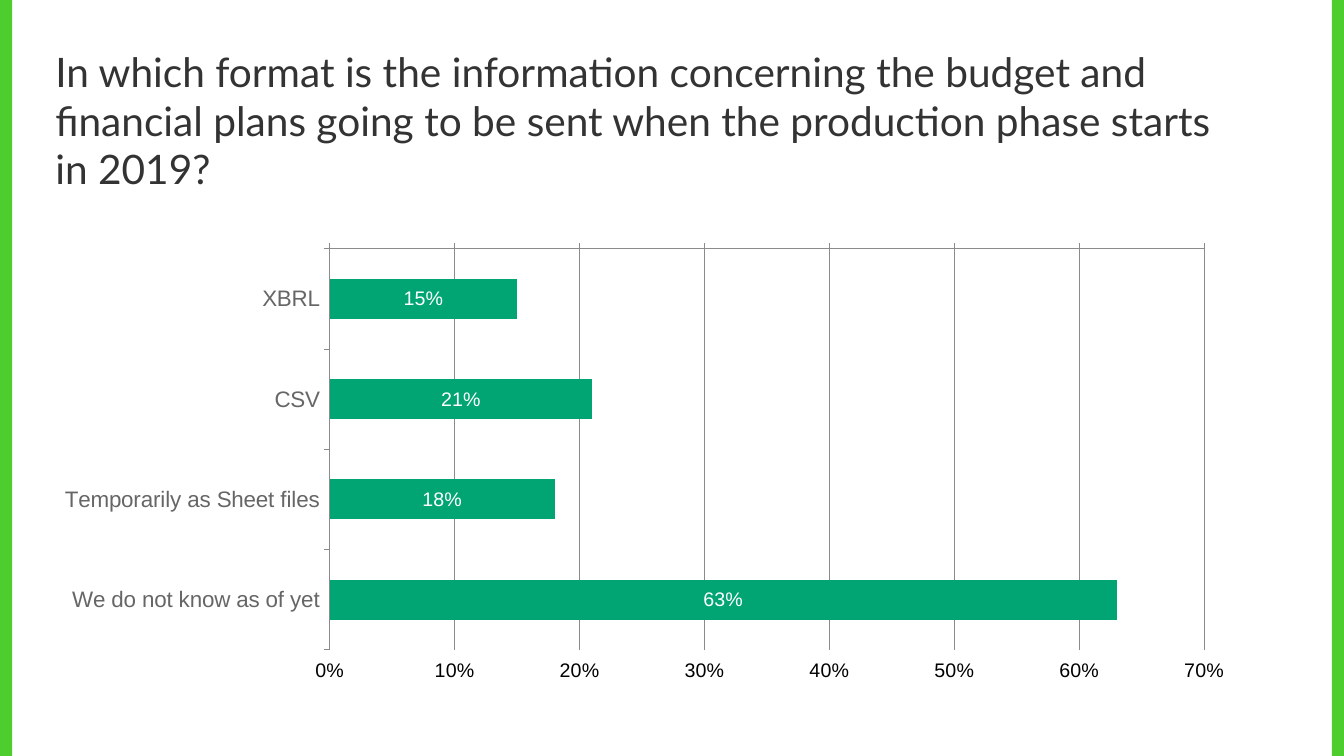
from dataclasses import dataclass

from lxml import etree
from pptx import Presentation
from pptx.chart.data import CategoryChartData
from pptx.dml.color import RGBColor
from pptx.enum.chart import (XL_CHART_TYPE, XL_LABEL_POSITION, XL_TICK_LABEL_POSITION,
                             XL_TICK_MARK)
from pptx.enum.shapes import MSO_SHAPE
from pptx.enum.text import MSO_ANCHOR
from pptx.oxml.ns import qn
from pptx.util import Inches, Pt

BAR = XL_CHART_TYPE.BAR_CLUSTERED
RECT = MSO_SHAPE.RECTANGLE
MIDDLE = MSO_ANCHOR.MIDDLE
CENTER = XL_LABEL_POSITION.CENTER
LOW, HIGH = XL_TICK_LABEL_POSITION.LOW, XL_TICK_LABEL_POSITION.HIGH
TICK_OUT, TICK_NONE = XL_TICK_MARK.OUTSIDE, XL_TICK_MARK.NONE


@dataclass(frozen=True)
class Theme:
    edge: RGBColor = RGBColor(0x4D, 0xCE, 0x2E)
    title: RGBColor = RGBColor(0x33, 0x33, 0x33)
    bar: RGBColor = RGBColor(0x00, 0xA5, 0x73)
    category: RGBColor = RGBColor(0x66, 0x66, 0x66)
    value: RGBColor = RGBColor(0x00, 0x00, 0x00)
    label: RGBColor = RGBColor(0xFF, 0xFF, 0xFF)
    line: RGBColor = RGBColor(0x8B, 0x8B, 0x8B)
    title_font: str = "Lato"
    chart_font: str = "Arial"
    title_size: Pt = Pt(29)
    category_size: Pt = Pt(16)
    value_size: Pt = Pt(14)


THEME = Theme()
SLIDE_W, SLIDE_H, EDGE_W = 13.33, 7.5, 0.12

QUESTION = ("In which format is the information concerning the budget and financial plans "
            "going to be sent when the production phase starts in 2019?")
ANSWERS = {
    "XBRL": 0.15,
    "CSV": 0.21,
    "Temporarily as Sheet files": 0.18,
    "We do not know as of yet": 0.63,
}


def set_font(font, name, size, color):
    font.name, font.size, font.color.rgb = name, size, color


def add_edges(s, x, y, w, h):
    """Green strips down both sides of the box."""
    for left in (x, x + w - EDGE_W):
        sp = s.shapes.add_shape(RECT, Inches(left), Inches(y), Inches(EDGE_W), Inches(h))
        sp.shadow.inherit = False
        sp.fill.solid()
        sp.fill.fore_color.rgb = THEME.edge
        sp.line.fill.background()


def add_title(s, x, y, w, h, text):
    tf = s.shapes.add_textbox(Inches(x), Inches(y), Inches(w), Inches(h)).text_frame
    tf.word_wrap = True
    tf.vertical_anchor = MIDDLE
    p = tf.paragraphs[0]
    p.text = text
    set_font(p.font, THEME.title_font, THEME.title_size, THEME.title)


def fix_plot_area(chart, **fractions):
    """Fix the inner plot area as fractions of the chart."""
    area = chart.element.find(".//" + qn("c:plotArea"))
    for old in area.findall(qn("c:layout")):
        area.remove(old)
    layout = etree.Element(qn("c:layout"))
    area.insert(0, layout)
    manual = etree.SubElement(layout, qn("c:manualLayout"))
    settings = {"layoutTarget": "inner", "xMode": "edge", "yMode": "edge", **fractions}
    for tag, value in settings.items():
        etree.SubElement(manual, qn("c:" + tag)).set("val", str(value))


def add_answer_chart(s, x, y, w, h, answers):
    data = CategoryChartData(number_format="0%")
    data.categories = list(answers)
    data.add_series("Series 1", list(answers.values()))
    chart = s.shapes.add_chart(BAR, Inches(x), Inches(y), Inches(w), Inches(h), data).chart
    chart.has_legend = False
    chart.has_title = False
    set_font(chart.font, THEME.chart_font, THEME.value_size, THEME.value)
    fix_plot_area(chart, x=0.24, y=0.02, w=0.73, h=0.89)

    # Axes: first answer on top, percentages along the bottom
    cat, val = chart.category_axis, chart.value_axis
    cat.reverse_order = True
    cat.tick_label_position = LOW
    val.tick_label_position = HIGH
    val.minimum_scale, val.maximum_scale, val.major_unit = 0, 0.7, 0.1
    val.tick_labels.number_format = "0%"
    val.tick_labels.number_format_is_linked = False
    set_font(cat.tick_labels.font, THEME.chart_font, THEME.category_size, THEME.category)
    val.has_major_gridlines = True
    for axis in (cat, val):
        axis.major_tick_mark, axis.minor_tick_mark = TICK_OUT, TICK_NONE
    for part in (cat, val, val.major_gridlines):
        part.format.line.color.rgb = THEME.line
        part.format.line.width = Pt(0.75)

    # Bars and their labels
    plot = chart.plots[0]
    plot.gap_width = 150
    plot.vary_by_categories = False
    fill = plot.series[0].format.fill
    fill.solid()
    fill.fore_color.rgb = THEME.bar
    plot.has_data_labels = True
    labels = plot.data_labels
    labels.show_value = True
    labels.number_format, labels.number_format_is_linked = "0%", False
    labels.position = CENTER
    set_font(labels.font, THEME.chart_font, THEME.value_size, THEME.label)


def main():
    prs = Presentation()
    prs.slide_width, prs.slide_height = Inches(SLIDE_W), Inches(SLIDE_H)
    s = prs.slides.add_slide(prs.slide_layouts[6])
    add_edges(s, 0, 0, SLIDE_W, SLIDE_H)
    add_title(s, 0.45, 0.65, 11.88, 1.08, QUESTION)
    add_answer_chart(s, 0.42, 2.38, 11.88, 4.47, ANSWERS)
    prs.save("out.pptx")


if __name__ == "__main__":
    main()
